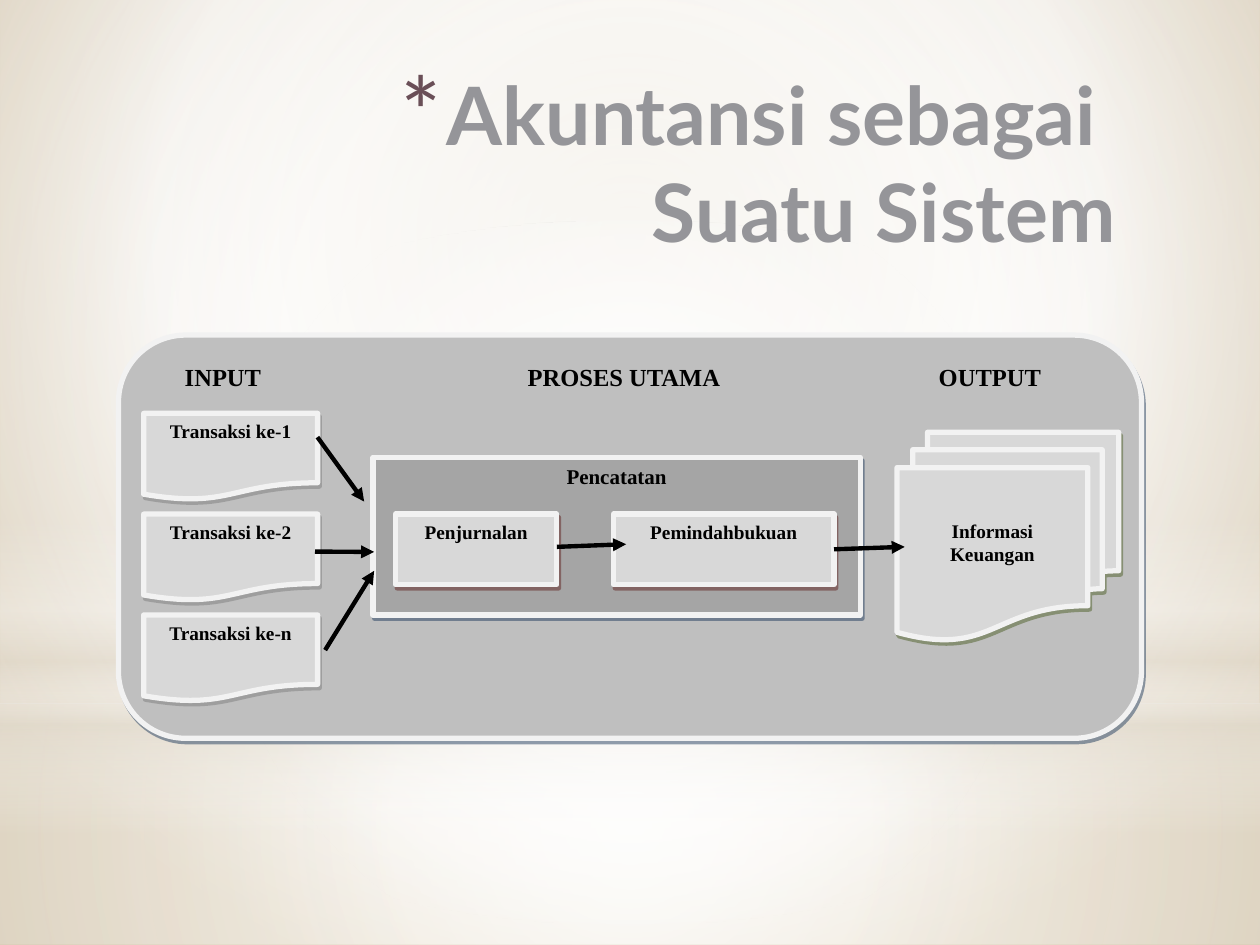
from lxml import etree
from pptx import Presentation
from pptx.dml.color import RGBColor
from pptx.enum import shapes, text
from pptx.oxml import ns
from pptx.util import Pt

HUE = {"panel": "BFBFBF", "paper": "D8D8D8", "frame": "A5A5A5", "edge": "F2F2F2",
       "ink": "000000", "title": "959599", "star": "6A4F57", "navy": "243F60",
       "grey": "7F7F7F", "wine": "622423", "olive": "4E6128",
       "white": "FFFFFF", "sand": "E3DCCF", "cream": "DFD5C1", "tan": "CCB791"}
KIND = shapes.MSO_SHAPE
MID = (50, 50, 50, 50)


def rgb(name):
    """Return the colour of a name."""
    return RGBColor.from_string(HUE[name])


def sub(node, tag, **attrs):
    """Append a drawing element with attributes."""
    item = etree.SubElement(node, ns.qn("a:" + tag))
    for key, val in attrs.items():
        item.set(key, str(val))
    return item


def tint(node, name, alpha=100):
    """Append a colour with its opacity in percent."""
    item = sub(node, "srgbClr", val=HUE[name])
    if alpha < 100:
        sub(item, "alpha", val=alpha * 1000)


def fade(fill, root, stops, focus=None):
    """Give a fill a radial gradient, or a downward one without focus."""
    fill.solid()
    old = root.find(".//" + ns.qn("a:solidFill"))
    grad = etree.Element(ns.qn("a:gradFill"), rotWithShape="1")
    marks = sub(grad, "gsLst")
    for pos, name, alpha in stops:
        tint(sub(marks, "gs", pos=pos * 1000), name, alpha)
    if focus:
        ring = sub(grad, "path", path="circle")
        sub(ring, "fillToRect", **{k: v * 1000 for k, v in zip("ltrb", focus)})
    else:
        sub(grad, "lin", ang=5400000, scaled=0)
    old.getparent().replace(old, grad)


def write(frame, words, size, font="Times New Roman", hue="ink"):
    """Add a bold run to the first paragraph of a frame."""
    run = frame.paragraphs[0].add_run()
    run.text = words
    run.font.size, run.font.name, run.font.bold = Pt(size), font, True
    run.font.color.rgb = rgb(hue)


def block(slide, kind, box, fill, shade, words="", size=11, top=3.6):
    """Draw a pale-edged shape with a hard shadow and a top label."""
    item = slide.shapes.add_shape(kind, *map(Pt, box))
    item.shadow.inherit = False
    item.fill.solid()
    item.fill.fore_color.rgb = rgb(fill)
    item.line.color.rgb = rgb(edge := "edge")
    item.line.width = Pt(3)
    glow = item._element.spPr.find(ns.qn("a:effectLst"))
    tint(sub(glow, "outerShdw", blurRad=0, dist=Pt(2.2), dir=63 * 60000,
             algn="ctr", rotWithShape=0), shade, 50)
    if words:
        frame = item.text_frame
        frame.word_wrap = True
        frame.margin_top = Pt(top)
        frame.vertical_anchor = text.MSO_ANCHOR.TOP
        frame.paragraphs[0].alignment = text.PP_ALIGN.CENTER
        write(frame, words, size)


def arrow(slide, x1, y1, x2, y2):
    """Draw a black arrow between two points."""
    line = slide.shapes.add_connector(shapes.MSO_CONNECTOR.STRAIGHT,
                                      *map(Pt, (x1, y1, x2, y2)))
    line.line.color.rgb = rgb("ink")
    line.line.width = Pt(2.5)
    sub(line.line._get_or_add_ln(), "tailEnd", type="triangle")
    sub(line._element.spPr, "effectLst")


def backdrop(slide, wide, high):
    """Lay the soft beige gradients over the whole slide."""
    back = slide.background
    fade(back.fill, slide._element,
         [(0, "cream", 100), (60, "white", 100), (100, "tan", 100)], (20, 10, 20, 60))
    split = 401.8
    layers = [
        (KIND.RECTANGLE, split, high - split, MID,
         [(0, "white", 91), (37, "white", 76), (100, "sand", 79)]),
        (KIND.RECTANGLE, 0, split, MID,
         [(0, "white", 89), (48, "white", 62), (100, "sand", 79)]),
        (KIND.RECTANGLE, 296.6, 180, None,
         [(0, "white", 0), (29, "white", 30), (45, "sand", 40),
          (55, "white", 26), (65, "sand", 60), (100, "white", 0)]),
        (KIND.OVAL, 126, split, MID, [(0, "white", 100), (56, "white", 0)])]
    for kind, top, tall, focus, stops in layers:
        item = slide.shapes.add_shape(kind, 0, Pt(top), Pt(wide), Pt(tall))
        item.shadow.inherit = False
        item.line.fill.background()
        fade(item.fill, item._element.spPr, stops, focus)


def title(slide, box):
    """Write the right-aligned title with its star bullet."""
    frame = slide.shapes.add_textbox(*map(Pt, box)).text_frame
    frame.word_wrap = True
    para = frame.paragraphs[0]
    para.alignment = text.PP_ALIGN.RIGHT
    props = para._p.get_or_add_pPr()
    props.set("marL", str(Pt(38)))
    props.set("indent", str(Pt(-25)))
    tint(sub(props, "buClr"), "star")
    sub(props, "buSzPct", val=128000)
    sub(props, "buFont", typeface="Calibri")
    sub(props, "buChar", char="*")
    write(frame, "Akuntansi sebagai ", 46, "Lato", "title")
    para.add_line_break()
    write(frame, "Suatu Sistem", 46, "Lato", "title")


def heads(slide, x, y):
    """Write the three column headings, each centred on its column."""
    for mid, words in ((59.7, "INPUT"), (288.9, "PROSES UTAMA"), (498, "OUTPUT")):
        box = (x + mid - 75, y + 12, 150, 24)
        frame = slide.shapes.add_textbox(*map(Pt, box)).text_frame
        frame.word_wrap = True
        frame.paragraphs[0].alignment = text.PP_ALIGN.CENTER
        write(frame, words, 14)


def record(slide, x, y, wide, high):
    """Draw the recording frame with its two steps."""
    block(slide, KIND.RECTANGLE, (x, y, wide, high), "frame", "navy", "Pencatatan", 12)
    for left, span, words in ((12.9, 92.2, "Penjurnalan"), (137.5, 126, "Pemindahbukuan")):
        block(slide, KIND.RECTANGLE, (x + left, y + 32.4, span, 40.3),
              "paper", "wine", words)


def system(slide, x, y, wide, high):
    """Draw the accounting system from input to output."""
    block(slide, KIND.ROUNDED_RECTANGLE, (x, y, wide, high), "panel", "navy")
    heads(slide, x, y)
    for row, mark in enumerate("12n"):
        block(slide, KIND.FLOWCHART_DOCUMENT, (x + 14.4, y + 44.7 + row * 57.6, 99.4, 49.5),
              "paper", "grey", f"Transaksi ke-{mark}")
    record(slide, x + 145.4, y + 69.9, 278.6, 90)
    block(slide, KIND.FLOWCHART_MULTIDOCUMENT, (x + 444.9, y + 55.5, 126.7, 118.8),
          "paper", "olive", "Informasi Keuangan", top=29.5)
    for x1, y1, x2, y2 in ((250.5, 121, 290.1, 119.5), (408.9, 122.4, 449.3, 121),
                           (112.3, 123.7, 146.1, 123.9), (113.7, 58.3, 140.4, 95.1),
                           (118.1, 180, 146.1, 134.7)):
        arrow(slide, x + x1, y + y1, x + x2, y + y2)


def main():
    """Build the slide and save it."""
    deck = Presentation()
    deck.slide_width, deck.slide_height = Pt(720), Pt(540)
    slide = deck.slides.add_slide(deck.slide_layouts[6])
    backdrop(slide, 720, 540)
    title(slide, (56.2, 33.8, 588.2, 140.4))
    system(slide, 67.7, 191.5, 584.6, 230.4)
    deck.save("out.pptx")


if __name__ == "__main__":
    main()
